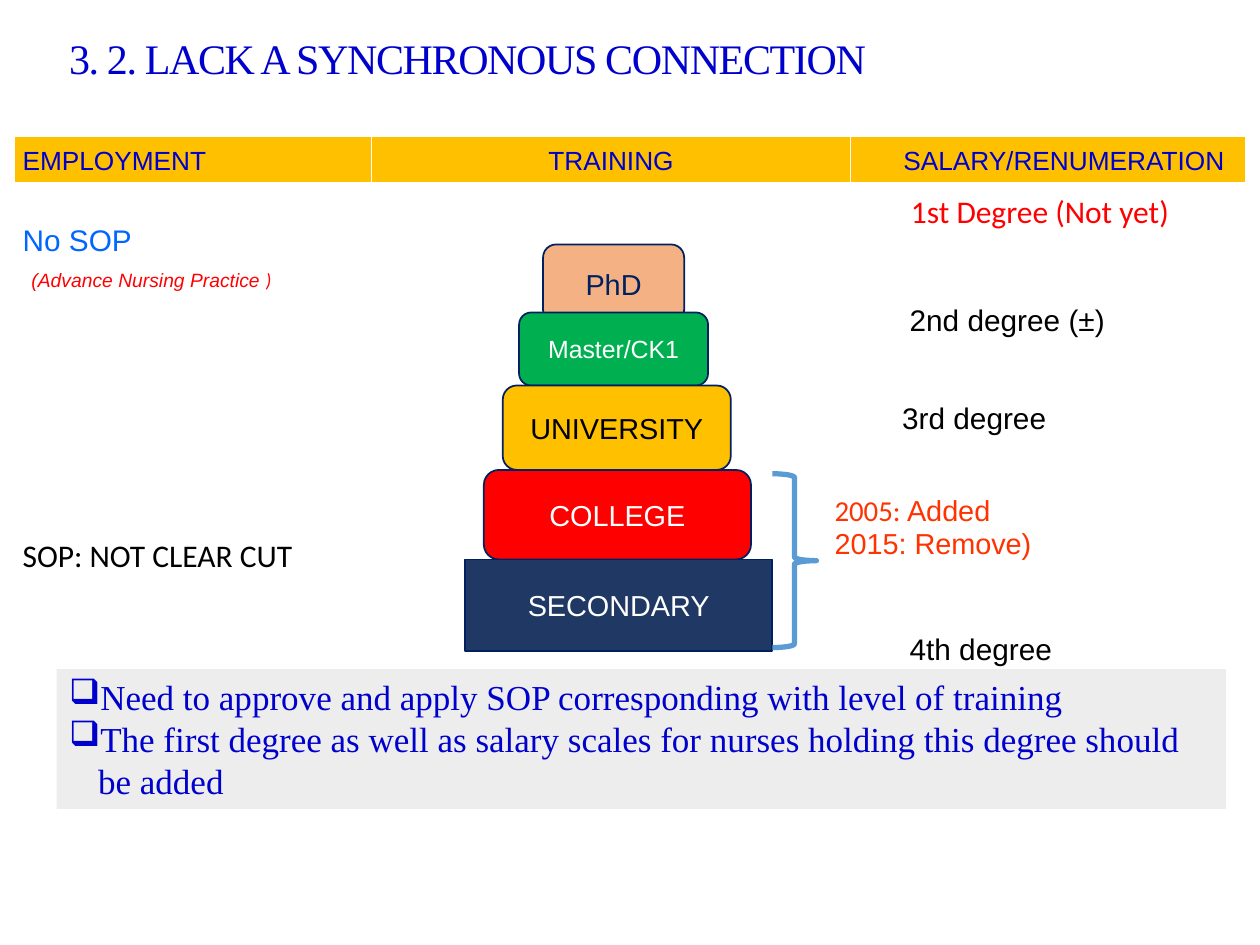
from lxml import etree
from pptx import Presentation, util as u
from pptx.dml.color import RGBColor
from pptx.enum import shapes, text
from pptx.oxml.ns import qn

BLUE = RGBColor(0x00, 0x00, 0xCC)
SKY = RGBColor(0x00, 0x66, 0xFF)
NAVY = RGBColor(0x00, 0x20, 0x60)
DEEP = RGBColor(0x20, 0x38, 0x64)
STEEL = RGBColor(0x5B, 0x9B, 0xD5)
RED = RGBColor(0xFF, 0x00, 0x00)
FLAME = RGBColor(0xFF, 0x33, 0x00)
GOLD = RGBColor(0xFF, 0xC0, 0x00)
PEACH = RGBColor(0xF4, 0xB1, 0x83)
GREEN = RGBColor(0x00, 0xB0, 0x50)
GRAY = RGBColor(0xED, 0xED, 0xED)
BLACK = RGBColor(0x00, 0x00, 0x00)
WHITE = RGBColor(0xFF, 0xFF, 0xFF)

SANS, BODY, SERIF = "Arial", "Calibri", "Times New Roman"
LEFT, MID = text.PP_ALIGN.LEFT, text.PP_ALIGN.CENTER
TOP, CORE, BASE = text.MSO_ANCHOR.TOP, text.MSO_ANCHOR.MIDDLE, text.MSO_ANCHOR.BOTTOM
RECT = shapes.MSO_SHAPE.RECTANGLE
ROUND = shapes.MSO_SHAPE.ROUNDED_RECTANGLE
BRACE = shapes.MSO_SHAPE.RIGHT_BRACE


class Page:
    def __init__(self, deck):
        self.slide = deck.slides.add_slide(deck.slide_layouts[6])
        self.lead = u.Pt(20)

    def font(self, font, size, face, color):
        font.size, font.name = u.Pt(size), face
        font.bold = False
        font.color.rgb = color

    def line(self, para, words, size, face, color, align=LEFT):
        run = para.add_run()
        run.text = words
        para.alignment = align
        self.font(para.font, size, face, color)
        return run

    def title(self, box, words):
        shape = self.slide.shapes.add_textbox(*map(u.Inches, box))
        shape.text_frame.word_wrap = True
        run = self.line(shape.text_frame.paragraphs[0], words, 24, SERIF, BLUE)
        run._r.get_or_add_rPr().set("spc", "-80")

    def shape(self, kind, box, fill=None, edge=None, width=1):
        shape = self.slide.shapes.add_shape(kind, *map(u.Inches, box))
        shape.shadow.inherit = False
        if fill is None:
            shape.fill.background()
        else:
            shape.fill.solid()
            shape.fill.fore_color.rgb = fill
        if edge is None:
            shape.line.fill.background()
        else:
            shape.line.color.rgb = edge
            shape.line.width = u.Pt(width)
        shape.text_frame.word_wrap = True
        return shape

    def step(self, kind, box, fill, words, size, color):
        frame = self.shape(kind, box, fill, NAVY).text_frame
        frame.vertical_anchor = CORE
        self.line(frame.paragraphs[0], words, size, SANS, color, MID)

    def note(self, box, parts):
        frame = self.shape(ROUND, box).text_frame
        frame.vertical_anchor = CORE
        para = frame.paragraphs[0]
        para.alignment = LEFT
        para.line_spacing = u.Pt(18.8)
        for words, face in parts:
            run = para.add_run()
            run.text = words
            self.font(run.font, 16.5, face, FLAME)

    def list(self, box, items):
        frame = self.shape(RECT, box, GRAY).text_frame
        frame.vertical_anchor = TOP
        for i, words in enumerate(items):
            para = frame.add_paragraph() if i else frame.paragraphs[0]
            props = para._p.get_or_add_pPr()
            props.set("marL", str(u.Inches(0.23)))
            props.set("indent", str(u.Inches(-0.23)))
            etree.SubElement(props, qn("a:buChar")).set("char", "❑")
            self.line(para, words, 20, SERIF, BLUE)

    def table(self, box, cols, rows):
        frame = self.slide.shapes.add_table(len(rows), len(cols), *map(u.Inches, box))
        grid = frame.table
        grid.horz_banding = False
        for col, size in zip(grid.columns, cols):
            col.width = u.Inches(size)
        for row, size in zip(grid.rows, rows):
            row.height = u.Inches(size)
        for cell in grid.iter_cells():
            cell.fill.background()
        return grid

    def cell(self, cell, words, size, face, color, left=0.07, top=0.04,
             anchor=TOP, align=LEFT):
        cell.margin_left, cell.margin_top = u.Inches(left), u.Inches(top)
        cell.margin_right, cell.margin_bottom = u.Inches(0.07), u.Inches(0.04)
        cell.vertical_anchor = anchor
        para = cell.text_frame.paragraphs[0]
        para.line_spacing = self.lead
        self.line(para, words, size, face, color, align)

    def aside(self, cell, parts):
        para = cell.text_frame.add_paragraph()
        para._p.get_or_add_pPr().set("marL", str(u.Inches(0.07)))
        para.line_spacing = self.lead
        for words, face in parts:
            run = para.add_run()
            run.text = words
            self.font(run.font, 11, face, RED)
            run.font.italic = True


def main():
    deck = Presentation()
    deck.slide_width, deck.slide_height = u.Inches(10), u.Inches(7.5)
    page = Page(deck)

    grid = page.table((0.11, 1.08, 9.78, 4.22), (2.84, 3.8, 3.14),
                      (0.37, 0.5, 1.19, 0.7, 1.09, 0.38))
    for first, last, col in ((1, 2, 0), (3, 4, 0), (4, 5, 2)):
        grid.cell(first, col).merge(grid.cell(last, col))

    heads = (("EMPLOYMENT", 0.07, LEFT), ("TRAINING", 0.07, MID),
             ("SALARY/RENUMERATION", 0.42, LEFT))
    for col, (words, left, align) in enumerate(heads):
        head = grid.cell(0, col)
        head.fill.solid()
        head.fill.fore_color.rgb = GOLD
        page.cell(head, words, 15, SANS, BLUE, left, align=align)

    page.cell(grid.cell(1, 0), "No SOP", 17, SANS, SKY, top=0.32)
    page.aside(grid.cell(1, 0), (("(Advance Nursing Practice ", SANS), (")", BODY)))
    page.cell(grid.cell(3, 0), "SOP: NOT CLEAR CUT", 18, BODY, BLACK, top=1.15)

    ranks = (("1st Degree (Not yet)", 18, BODY, RED, 0.48, CORE),
             ("2nd degree (±)", 17, SANS, BLACK, 0.47, CORE),
             ("3rd degree", 17, SANS, BLACK, 0.41, TOP),
             ("4th degree", 17, SANS, BLACK, 0.47, BASE))
    for row, (words, size, face, color, left, anchor) in enumerate(ranks, 1):
        page.cell(grid.cell(row, 2), words, size, face, color, left, anchor=anchor)

    steps = ((ROUND, (4.31, 1.94, 1.12, 0.62), PEACH, "PhD", 16.5, NAVY),
             (ROUND, (4.12, 2.48, 1.5, 0.58), GREEN, "Master/CK1", 14.2, WHITE),
             (ROUND, (3.99, 3.06, 1.81, 0.67), GOLD, "UNIVERSITY", 16.5, BLACK),
             (ROUND, (3.84, 3.73, 2.12, 0.71), RED, "COLLEGE", 16.5, WHITE),
             (RECT, (3.69, 4.44, 2.44, 0.73), DEEP, "SECONDARY", 16.5, WHITE))
    for step in steps:
        page.step(*step)

    page.shape(BRACE, (6.13, 3.76, 0.35, 1.38), edge=STEEL, width=3)
    page.title((0.45, 0.21, 9.32, 0.5), "3. 2. LACK A SYNCHRONOUS CONNECTION")
    page.note((6.5, 3.92, 1.87, 0.53), (("2005: ", BODY), ("Added 2015: Remove)", SANS)))
    page.list((0.45, 5.31, 9.28, 1.11), (
        "Need to approve and apply SOP corresponding with level of training",
        "The first degree as well as salary scales for nurses holding this degree should be added"))
    deck.save("out.pptx")


if __name__ == "__main__":
    main()
